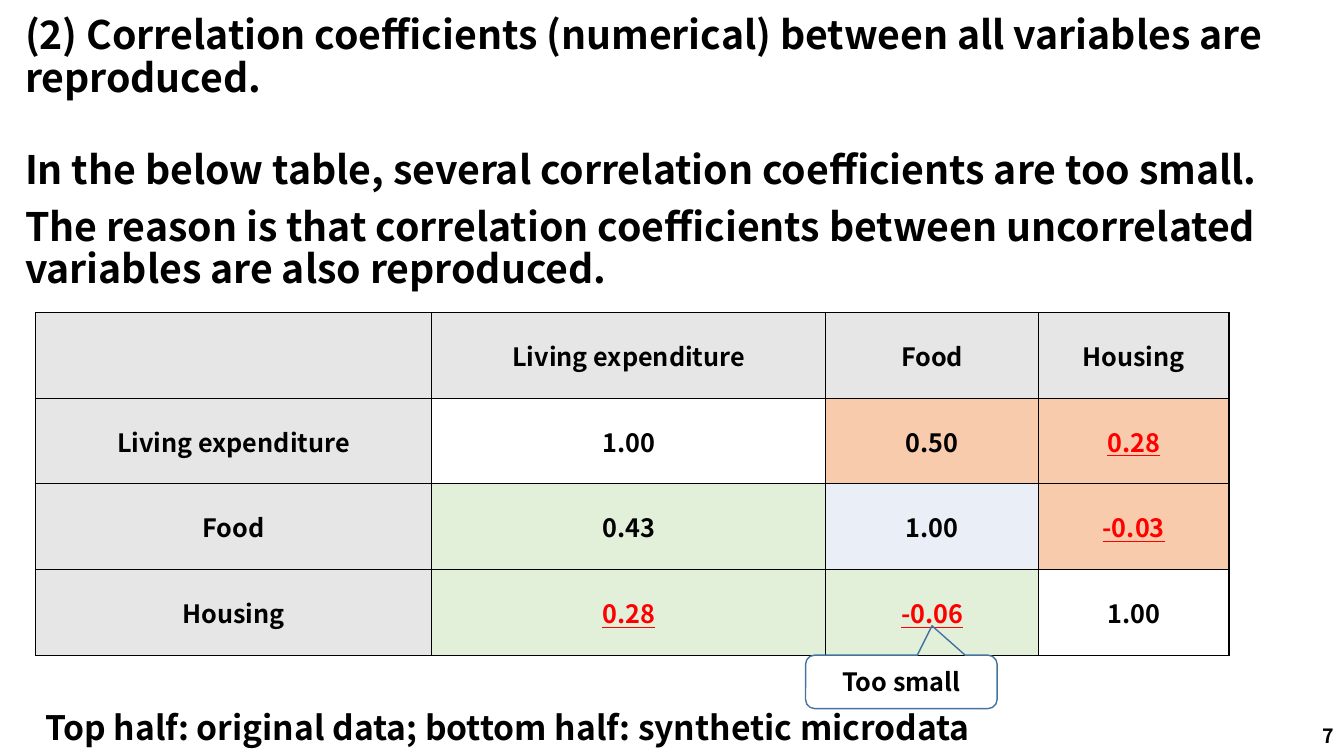
from dataclasses import dataclass

from lxml.etree import SubElement
from pptx import Presentation
from pptx.dml.color import RGBColor
from pptx.enum.shapes import MSO_SHAPE
from pptx.enum.text import MSO_ANCHOR, MSO_AUTO_SIZE, PP_ALIGN
from pptx.oxml.ns import qn
from pptx.util import Inches, Pt

FONT = "Noto Sans CJK JP"
BLACK, RED = "000000", "FF0000"
HEADER, ORIGINAL, SYNTHETIC, MIDDLE = "E7E6E6", "F8CBAD", "E2F0D9", "EAEFF7"


@dataclass
class Statement:
    text: str
    space_before: float = 10


@dataclass
class Entry:
    text: str
    fill: str | None = None
    too_small: bool = False


STATEMENTS = [
    Statement("(2) Correlation coefficients (numerical) between all variables are reproduced."),
    Statement("In the below table, several correlation coefficients are too small.", 36),
    Statement("The reason is that correlation coefficients between uncorrelated variables "
              "are also reproduced."),
]
VARIABLES = ["Living expenditure", "Food", "Housing"]
COEFFICIENTS = [
    [Entry("1.00"), Entry("0.50", ORIGINAL), Entry("0.28", ORIGINAL, True)],
    [Entry("0.43", SYNTHETIC), Entry("1.00", MIDDLE), Entry("-0.03", ORIGINAL, True)],
    [Entry("0.28", SYNTHETIC, True), Entry("-0.06", SYNTHETIC, True), Entry("1.00")],
]
COLUMN_WIDTHS = [3.93, 3.91, 2.11, 1.89]
ROW_HEIGHT = 0.85


def color(value: str) -> RGBColor:
    return RGBColor.from_string(value)


def add_span(para, text: str, size: float, ink: str = BLACK, underline: bool = False) -> None:
    span = para.add_run()
    span.text = text
    span.font.name = FONT
    span.font.size = Pt(size)
    span.font.bold = True
    span.font.underline = underline
    span.font.color.rgb = color(ink)


def add_text_box(page, left: float, top: float, width: float, height: float):
    box = page.shapes.add_textbox(Inches(left), Inches(top), Inches(width), Inches(height))
    box.text_frame.word_wrap = True
    return box.text_frame


def set_borders(cell) -> None:
    properties = cell._tc.get_or_add_tcPr()
    for position, side in enumerate(("a:lnL", "a:lnR", "a:lnT", "a:lnB")):
        line = SubElement(properties, qn(side), w=str(Pt(1)))
        fill = SubElement(line, qn("a:solidFill"))
        SubElement(fill, qn("a:srgbClr"), val=BLACK)
        properties.insert(position, line)


def draw_cell(cell, entry: Entry) -> None:
    cell.vertical_anchor = MSO_ANCHOR.MIDDLE
    cell.margin_left = cell.margin_right = Inches(0.07)
    cell.margin_top = cell.margin_bottom = 0
    if entry.fill:
        cell.fill.solid()
        cell.fill.fore_color.rgb = color(entry.fill)
    else:
        cell.fill.background()
    set_borders(cell)
    para = cell.text_frame.paragraphs[0]
    para.alignment = PP_ALIGN.CENTER
    if entry.text:
        add_span(para, entry.text, 18, RED if entry.too_small else BLACK, entry.too_small)


def draw_statements(page) -> None:
    frame = add_text_box(page, 0.15, 0.11, 13.09, 3.36)
    for index, statement in enumerate(STATEMENTS):
        para = frame.add_paragraph() if index else frame.paragraphs[0]
        para.line_spacing = 0.9
        para.space_before = Pt(statement.space_before)
        add_span(para, statement.text, 28)


def draw_table(page) -> None:
    rows = [[Entry(name, HEADER) for name in ["", *VARIABLES]]]
    rows += [[Entry(name, HEADER), *values] for name, values in zip(VARIABLES, COEFFICIENTS)]
    table = page.shapes.add_table(
        len(rows), len(COLUMN_WIDTHS), Inches(0.35), Inches(3.1),
        Inches(sum(COLUMN_WIDTHS)), Inches(ROW_HEIGHT * len(rows))).table
    table.first_row = table.horz_banding = False
    for column, width in zip(table.columns, COLUMN_WIDTHS):
        column.width = Inches(width)
    for row, entries in zip(table.rows, rows):
        row.height = Inches(ROW_HEIGHT)
        for cell, entry in zip(row.cells, entries):
            draw_cell(cell, entry)


def draw_callout(page) -> None:
    callout = page.shapes.add_shape(MSO_SHAPE.ROUNDED_RECTANGULAR_CALLOUT, Inches(7.99),
                                    Inches(6.5), Inches(1.9), Inches(0.53))
    for index, value in enumerate((0.16, -1.05, 0.17)):
        callout.adjustments[index] = value
    callout.shadow.inherit = False
    callout.fill.background()
    callout.line.color.rgb = color("43739E")
    callout.line.width = Pt(1)
    callout.text_frame.vertical_anchor = MSO_ANCHOR.MIDDLE
    para = callout.text_frame.paragraphs[0]
    para.alignment = PP_ALIGN.CENTER
    add_span(para, "Too small", 18)


def main() -> None:
    deck = Presentation()
    deck.slide_width, deck.slide_height = Inches(13.33), Inches(7.5)
    page = deck.slides.add_slide(deck.slide_layouts[6])

    # Statements above the table
    draw_statements(page)

    # Page number
    number = add_text_box(page, 10.33, 7.1, 3, 0.4)
    number.vertical_anchor = MSO_ANCHOR.MIDDLE
    number.paragraphs[0].alignment = PP_ALIGN.RIGHT
    add_span(number.paragraphs[0], "7", 14)

    # Correlation table
    draw_table(page)

    # Table caption
    caption = add_text_box(page, 0.35, 6.96, 9.73, 0.5)
    caption.word_wrap = False
    caption.auto_size = MSO_AUTO_SIZE.SHAPE_TO_FIT_TEXT
    add_span(caption.paragraphs[0],
             "Top half: original data; bottom half: synthetic microdata", 24)

    # Callout on the smallest coefficient
    draw_callout(page)

    deck.save("out.pptx")


if __name__ == "__main__":
    main()
